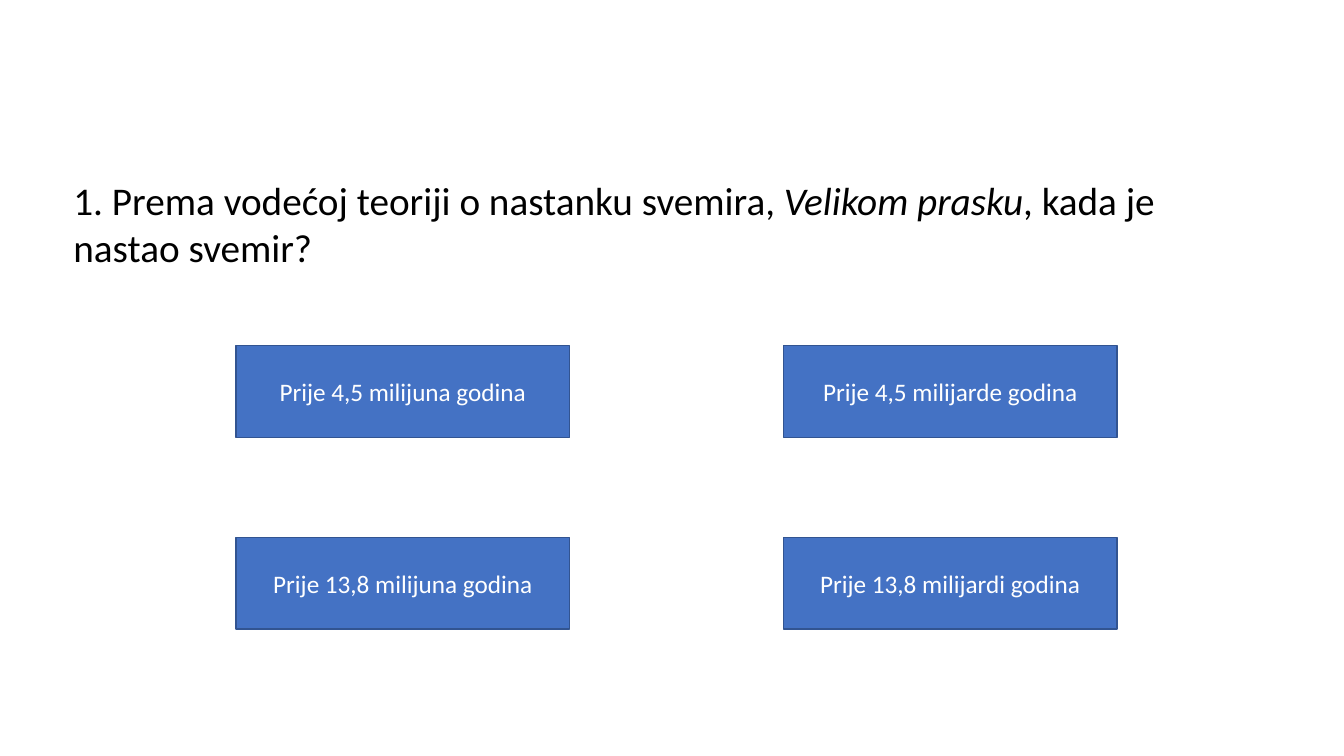
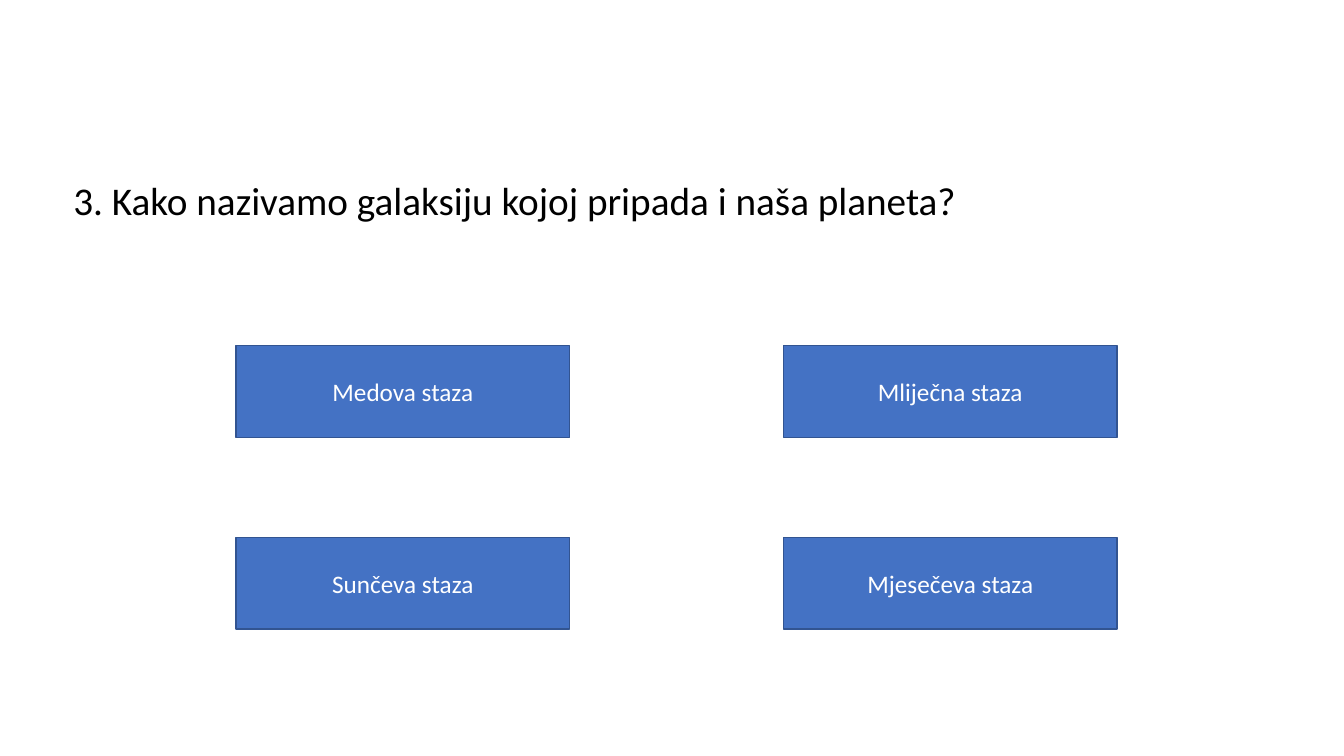
from pptx import Presentation
from pptx.dml.color import RGBColor
from pptx.enum import shapes, text
from pptx.util import Inches, Pt

# Shared style
BLUE = RGBColor(0x44, 0x72, 0xC4)
DARK_BLUE = RGBColor(0x32, 0x54, 0x91)
WHITE = RGBColor(0xFF, 0xFF, 0xFF)
BLACK = RGBColor(0x00, 0x00, 0x00)
FONT = "Calibri"

# Answer grid
COLUMNS = (2.34, 7.77)
ROWS = (3.43, 5.33)
ANSWER_WIDTH, ANSWER_HEIGHT = 3.31, 0.91

# Each question: text parts with an italic flag, line count, answers row by row
QUESTIONS = [
    (
        [
            ("1. Prema vodećoj teoriji o nastanku svemira, ", False),
            ("Velikom prasku", True),
            (", kada je nastao svemir?", False),
        ],
        2,
        [
            "Prije 4,5 milijuna godina",
            "Prije 4,5 milijarde godina",
            "Prije 13,8 milijuna godina",
            "Prije 13,8 milijardi godina",
        ],
    ),
    (
        [("3. Kako nazivamo galaksiju kojoj pripada i naša planeta?", False)],
        1,
        ["Medova staza", "Mliječna staza", "Sunčeva staza", "Mjesečeva staza"],
    ),
]


class Quiz:
    def __init__(self):
        self.presentation = Presentation()
        self.presentation.slide_width = Inches(13.33)
        self.presentation.slide_height = Inches(7.5)
        self.slide = None

    def add_slide(self):
        blank = self.presentation.slide_layouts[6]
        self.slide = self.presentation.slides.add_slide(blank)

    def format_font(self, font, size, color):
        font.name = FONT
        font.size = Pt(size)
        font.color.rgb = color

    def add_question(self, parts, lines):
        box = self.slide.shapes.add_textbox(
            Inches(0.63), Inches(1.7), Inches(11.81), Inches(0.1 + 0.47 * lines))
        frame = box.text_frame
        frame.word_wrap = True
        frame.auto_size = text.MSO_AUTO_SIZE.SHAPE_TO_FIT_TEXT
        for wording, italic in parts:
            run = frame.paragraphs[0].add_run()
            run.text = wording
            self.format_font(run.font, 28, BLACK)
            run.font.italic = italic

    def add_answer(self, wording, left, top):
        shape = self.slide.shapes.add_shape(
            shapes.MSO_SHAPE.RECTANGLE, Inches(left), Inches(top),
            Inches(ANSWER_WIDTH), Inches(ANSWER_HEIGHT))
        shape.shadow.inherit = False
        shape.fill.solid()
        shape.fill.fore_color.rgb = BLUE
        shape.line.color.rgb = DARK_BLUE
        shape.line.width = Pt(1)
        frame = shape.text_frame
        frame.text = wording
        frame.vertical_anchor = text.MSO_ANCHOR.MIDDLE
        paragraph = frame.paragraphs[0]
        paragraph.alignment = text.PP_ALIGN.CENTER
        self.format_font(paragraph.runs[0].font, 18, WHITE)

    def add_answers(self, answers):
        cells = [(left, top) for top in ROWS for left in COLUMNS]
        for wording, (left, top) in zip(answers, cells):
            self.add_answer(wording, left, top)


def main():
    quiz = Quiz()
    for parts, lines, answers in QUESTIONS:
        quiz.add_slide()
        quiz.add_answers(answers)
        quiz.add_question(parts, lines)
    quiz.presentation.save("out.pptx")


if __name__ == "__main__":
    main()
